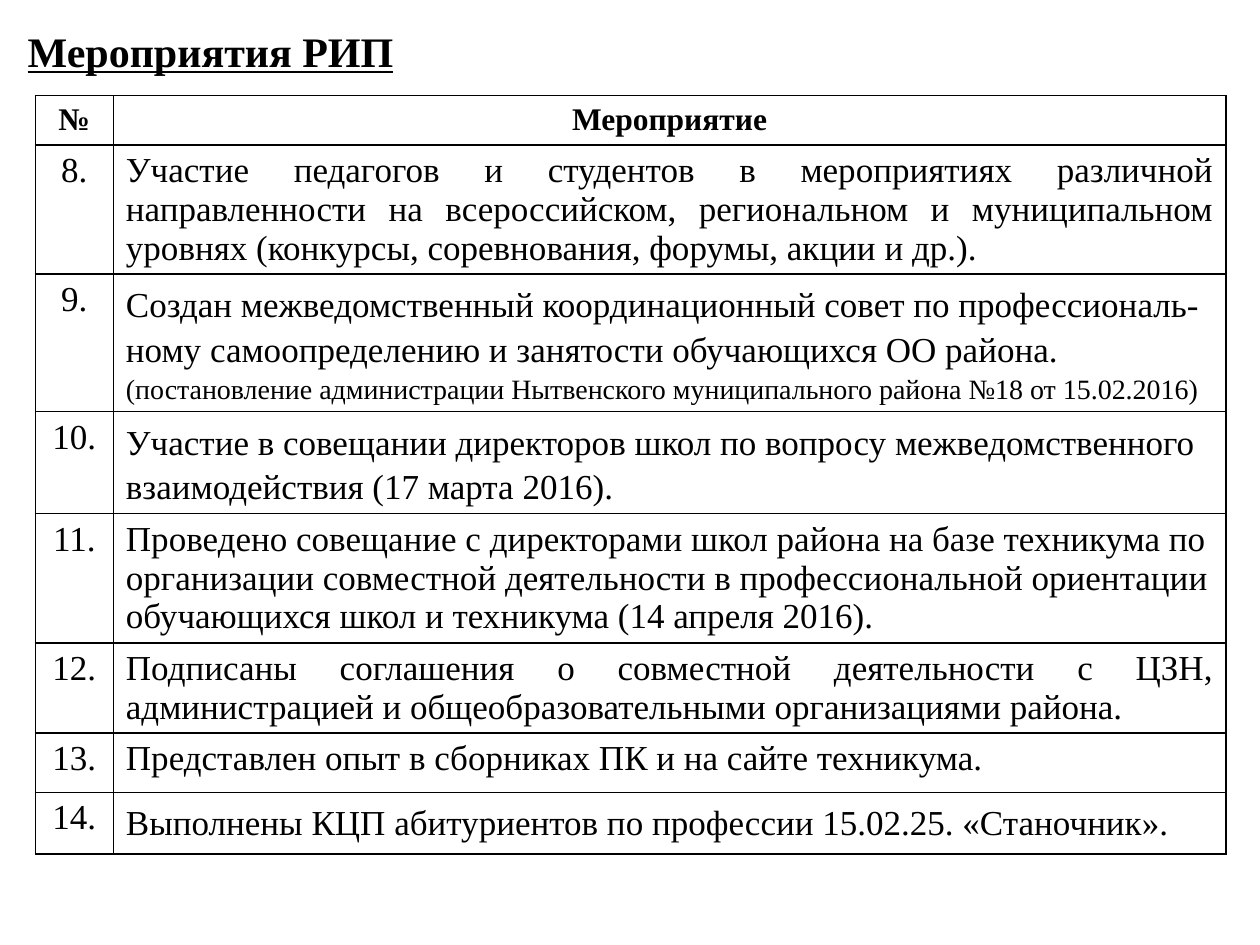
from lxml.etree import SubElement
from pptx import Presentation
from pptx.dml.color import RGBColor
from pptx.enum.text import MSO_ANCHOR, PP_ALIGN
from pptx.oxml.ns import qn
from pptx.util import Inches, Pt

FONT = "Times New Roman"
INK = "000000"
LEFT, MID, FULL = PP_ALIGN.LEFT, PP_ALIGN.CENTER, PP_ALIGN.JUSTIFY
WIDTHS = [0.62, 8.83]
HEAD = ["№", "Мероприятие"]
FIRST = 8
EVENTS = [
    (0.73, FULL, 1, "Участие педагогов и студентов в мероприятиях различной направленности "
     "на всероссийском, региональном и муниципальном уровнях "
     "(конкурсы, соревнования, форумы, акции и др.)."),
    (1.04, LEFT, 1.15, "Создан межведомственный координационный совет по "
     "профессиональ-ному самоопределению и занятости обучающихся ОО района. "),
    (0.7, LEFT, 1.15, "Участие в совещании директоров школ по вопросу "
     "межведомственного взаимодействия (17 марта 2016)."),
    (0.75, LEFT, 1, "Проведено совещание с директорами школ района на базе техникума "
     "по организации совместной деятельности в профессиональной ориентации "
     "обучающихся школ и техникума (14 апреля 2016)."),
    (0.42, FULL, 1, "Подписаны соглашения о совместной деятельности с ЦЗН, "
     "администрацией и общеобразовательными организациями района."),
    (0.47, FULL, 1, "Представлен опыт в сборниках ПК и на сайте техникума."),
    (0.49, FULL, 1.15, "Выполнены КЦП абитуриентов по профессии 15.02.25. «Станочник»."),
]
NOTE = "(постановление администрации Нытвенского муниципального района №18 от 15.02.2016)"
NOTE_ROW = 2


def paint(target, color):
    target.rgb = RGBColor.from_string(color)


def style(run, size, bold=False, line=False):
    font = run.font
    font.name, font.size, font.bold = FONT, Pt(size), bold
    font.underline = line
    paint(font.color, INK)


def border(cell):
    props = cell._tc.get_or_add_tcPr()
    for index, side in enumerate(("lnL", "lnR", "lnT", "lnB")):
        edge = props.makeelement(qn(f"a:{side}"), {"w": str(Pt(1))})
        fill = SubElement(edge, qn("a:solidFill"))
        SubElement(fill, qn("a:srgbClr"), val=INK)
        props.insert(index, edge)


def write(cell, text, align, size=20, bold=False, space=1):
    cell.fill.background()
    border(cell)
    para = cell.text_frame.paragraphs[0]
    para.text = text
    para.alignment = align
    para.line_spacing = space
    style(para.runs[0], size, bold)
    return para


def add_title(slide):
    title = slide.shapes.title
    title.left, title.top = Inches(0.12), Inches(0.13)
    title.width, title.height = Inches(9), Inches(0.54)
    frame = title.text_frame
    frame.text = "Мероприятия РИП"
    frame.vertical_anchor = MSO_ANCHOR.MIDDLE
    para = frame.paragraphs[0]
    para.alignment = LEFT
    style(para.runs[0], 24, True, True)


def add_grid(slide):
    rows = [0.39] + [event[0] for event in EVENTS]
    grid = slide.shapes.add_table(
        len(rows), len(WIDTHS), Inches(0.28), Inches(0.76),
        Inches(sum(WIDTHS)), Inches(sum(rows))).table
    grid.horz_banding = False
    for col, width in zip(grid.columns, WIDTHS):
        col.width = Inches(width)
    for row, height in zip(grid.rows, rows):
        row.height = Inches(height)
    for col, text in enumerate(HEAD):
        write(grid.cell(0, col), text, MID, 18, True)
    for row, (_, align, space, text) in enumerate(EVENTS, 1):
        write(grid.cell(row, 0), f"{FIRST + row - 1}.", MID)
        para = write(grid.cell(row, 1), text, align, space=space)
        if row == NOTE_ROW:
            run = para.add_run()
            run.text = NOTE
            style(run, 16)


def main():
    deck = Presentation()
    deck.slide_width, deck.slide_height = Inches(10), Inches(7.5)
    slide = deck.slides.add_slide(deck.slide_layouts[5])
    add_grid(slide)
    add_title(slide)
    deck.save("out.pptx")


if __name__ == "__main__":
    main()
